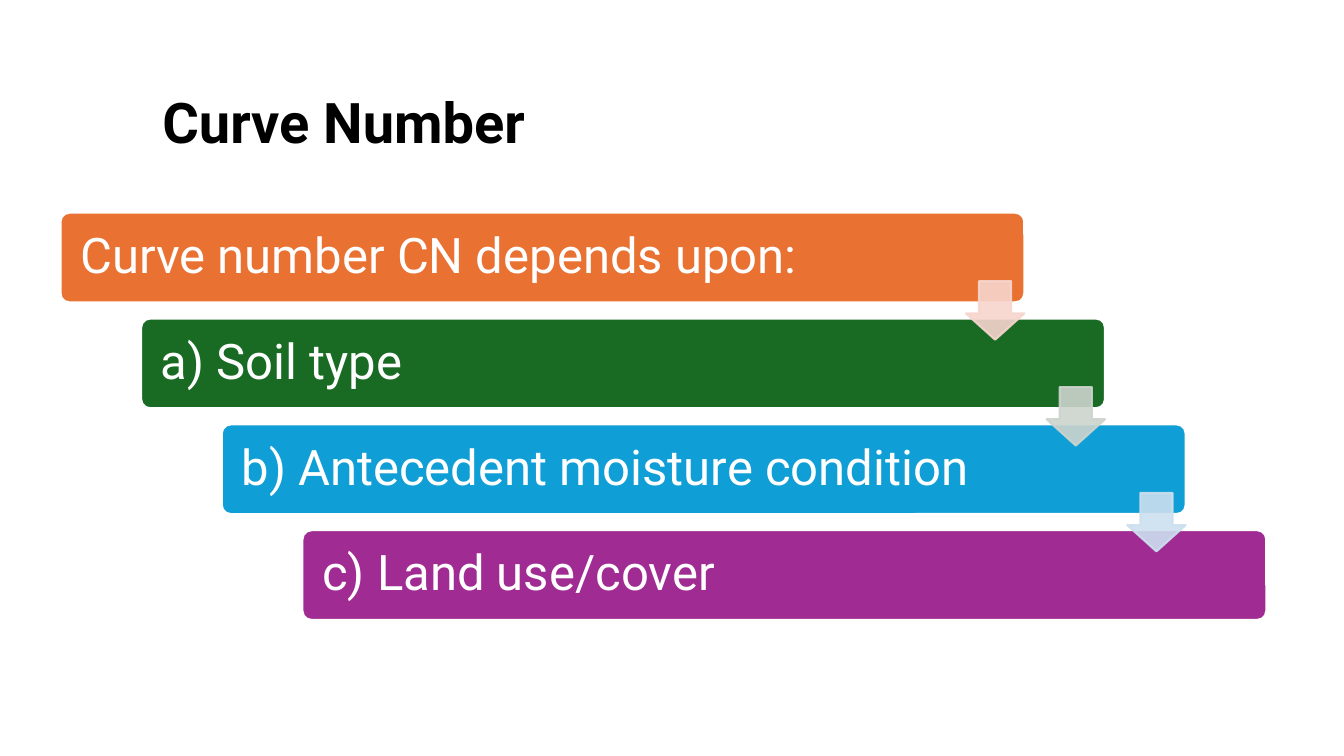
import pptx
import pptx.dml.color
import pptx.enum.shapes
import pptx.enum.text
import pptx.oxml
import pptx.oxml.ns
import pptx.util

SHAPE = pptx.enum.shapes.MSO_SHAPE
ANCHOR = pptx.enum.text.MSO_ANCHOR
ALIGN = pptx.enum.text.PP_ALIGN
Inches = pptx.util.Inches
Pt = pptx.util.Pt

# Theme: colours and type
THEME = {
    "font": "Roboto",
    "title_size": 40,
    "step_size": 35,
    "title": "000000",
    "on_bar": "FFFFFF",
    "outline": "FFFFFF",
    "outline_width": 1.5,
    "arrow_opacity": 90,
}

# Grid: each step moves one column right and one row down
WIDTH, HEIGHT = 13.33, 7.5
LEFT, TOP = 0.6, 2.11
COLUMN, ROW = 0.8, 1.05
BAR_WIDTH, BAR_HEIGHT = 9.56, 0.89
ARROW_SIZE, ARROW_DROP = 0.58, 0.68

# Steps: text, bar colour, colour of the arrow to the next step
STEPS = [
    ("Curve number CN depends upon:", "E97132", "F7D5CE"),
    ("a) Soil type", "196B24", "CCD4CD"),
    ("b) Antecedent moisture condition", "0F9ED5", "CCDFEF"),
    ("c) Land use/cover", "A02B93", None),
]


def rgb(color):
    return pptx.dml.color.RGBColor.from_string(color)


def apply(target, formats):
    for name, value in formats.items():
        setattr(target, name, value)


def write(tf, text, size, color, bold=False, inset=(0.1, 0.05)):
    x, y = (Inches(v) for v in inset)
    apply(tf, {
        "auto_size": pptx.enum.text.MSO_AUTO_SIZE.NONE,
        "word_wrap": True,
        "vertical_anchor": ANCHOR.MIDDLE,
        "margin_left": x, "margin_right": x,
        "margin_top": y, "margin_bottom": y,
    })
    p = tf.paragraphs[0]
    apply(p, {"alignment": ALIGN.LEFT, "line_spacing": 0.9})
    r = p.add_run()
    r.text = text
    apply(r.font, {"name": THEME["font"], "size": Pt(size), "bold": bold})
    r.font.color.rgb = rgb(color)


def add_title(s, text):
    title = s.shapes.title
    apply(title, {"left": Inches(1.51), "top": Inches(0.38),
                  "width": Inches(10.63), "height": Inches(1.72)})
    write(title.text_frame, text, THEME["title_size"], THEME["title"], bold=True)


def add_block(s, kind, box, adjustments, fill, line):
    sp = s.shapes.add_shape(kind, *(Inches(v) for v in box))
    sp.shadow.inherit = False
    for i, value in enumerate(adjustments):
        sp.adjustments[i] = value
    sp.fill.solid()
    sp.fill.fore_color.rgb = rgb(fill)
    sp.line.color.rgb = rgb(line)
    sp.line.width = Pt(THEME["outline_width"])
    return sp


def set_opacity(sp, percent):
    for color in sp.element.spPr.iter(pptx.oxml.ns.qn("a:srgbClr")):
        alpha = pptx.oxml.parse_xml(
            f'<a:alpha {pptx.oxml.ns.nsdecls("a")} val="{percent * 1000}"/>')
        color.append(alpha)


def add_bar(s, step, text, color):
    box = (LEFT + step * COLUMN, TOP + step * ROW, BAR_WIDTH, BAR_HEIGHT)
    sp = add_block(s, SHAPE.ROUNDED_RECTANGLE, box, [0.1], color, THEME["outline"])
    write(sp.text_frame, text, THEME["step_size"], THEME["on_bar"], inset=(0.17, 0.15))


def add_arrow(s, step, color):
    right = LEFT + step * COLUMN + BAR_WIDTH
    box = (right - ARROW_SIZE, TOP + step * ROW + ARROW_DROP, ARROW_SIZE, ARROW_SIZE)
    sp = add_block(s, SHAPE.DOWN_ARROW, box, [0.55, 0.45], color, color)
    set_opacity(sp, THEME["arrow_opacity"])


def main():
    prs = pptx.Presentation()
    apply(prs, {"slide_width": Inches(WIDTH), "slide_height": Inches(HEIGHT)})
    s = prs.slides.add_slide(prs.slide_layouts.get_by_name("Title Only"))
    add_title(s, "Curve Number")

    # Bars first, so that the arrows lie over them
    for step, (text, color, _) in enumerate(STEPS):
        add_bar(s, step, text, color)
    for step, (_, _, color) in enumerate(STEPS[:-1]):
        add_arrow(s, step, color)

    prs.save("out.pptx")


if __name__ == "__main__":
    main()
